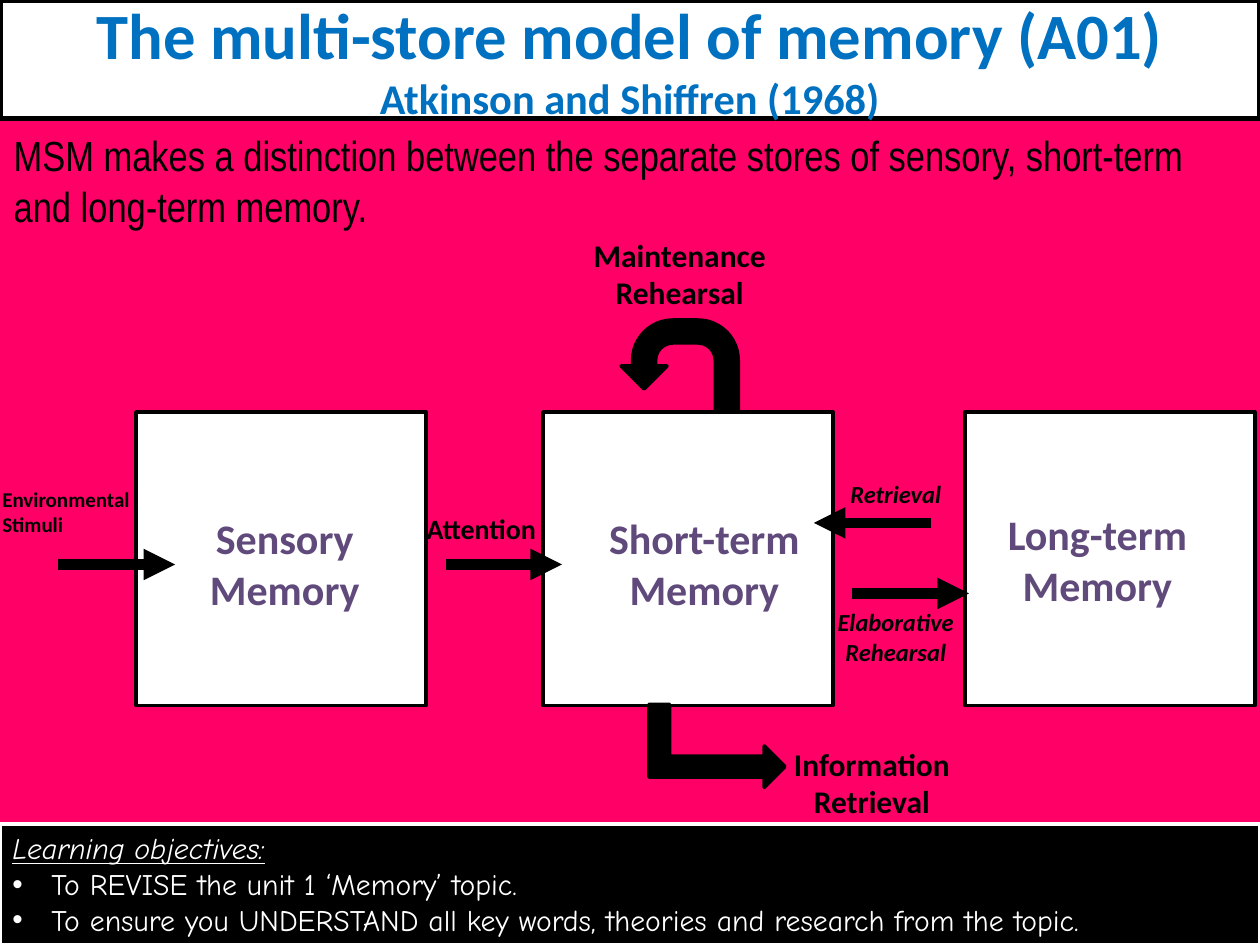
from lxml import etree
from pptx import Presentation
from pptx.dml.color import RGBColor
from pptx.enum.shapes import MSO_CONNECTOR, MSO_SHAPE
from pptx.enum.text import MSO_ANCHOR, MSO_AUTO_SIZE, PP_ALIGN
from pptx.oxml.ns import qn
from pptx.util import Inches, Pt

RECTANGLE = MSO_SHAPE.RECTANGLE
LEFT, CENTER = PP_ALIGN.LEFT, PP_ALIGN.CENTER
TOP, MIDDLE, BOTTOM = MSO_ANCHOR.TOP, MSO_ANCHOR.MIDDLE, MSO_ANCHOR.BOTTOM
COLORS = {"pink": "FF0066", "black": "000000", "white": "FFFFFF",
          "blue": "0070C0", "purple": "604A7B"}


def paint(shape, fill, line, width):
    shape.fill.solid()
    shape.fill.fore_color.rgb = RGBColor.from_string(COLORS[fill])
    shape.line.color.rgb = RGBColor.from_string(COLORS[line])
    shape.line.width = Pt(width)
    shape.shadow.inherit = False


def write(shape, text, size, color="black", font="Calibri", bold=True,
          italic=False, align=CENTER, anchor=TOP):
    frame = shape.text_frame
    frame.text = text
    frame.word_wrap = True
    frame.auto_size = MSO_AUTO_SIZE.NONE
    frame.vertical_anchor = anchor
    for paragraph in frame.paragraphs:
        paragraph.alignment = align
        for span in paragraph.runs:
            span.font.name = font
            span.font.size = Pt(size)
            span.font.bold = bold
            span.font.italic = italic
            span.font.color.rgb = RGBColor.from_string(COLORS[color])


deck = Presentation()
deck.slide_width, deck.slide_height = Inches(10), Inches(7.5)
page = deck.slides.add_slide(deck.slide_layouts[5])
page.background.fill.solid()
page.background.fill.fore_color.rgb = RGBColor.from_string(COLORS["pink"])

# Title banner
title = page.shapes.title
title.left, title.top = Inches(0), Inches(0)
title.width, title.height = Inches(10), Inches(0.94)
paint(title, "white", "black", 3)
write(title, "The multi-store model of memory (A01)\nAtkinson and Shiffren (1968)",
      36.9, "blue", anchor=MIDDLE)
title.text_frame.paragraphs[1].runs[0].font.size = Pt(24.2)

# Memory stores
for left in (1.08, 4.31, 7.66):
    store = page.shapes.add_shape(RECTANGLE, Inches(left), Inches(3.27),
                                  Inches(2.3), Inches(2.33))
    paint(store, "white", "black", 2)

# Straight arrows between the stores: start, end, height
for start, end, y in ((0.46, 1.39, 4.48), (3.54, 4.46, 4.48),
                      (6.76, 7.69, 4.71), (7.39, 6.46, 4.15)):
    arrow = page.shapes.add_connector(MSO_CONNECTOR.STRAIGHT, Inches(start), Inches(y),
                                      Inches(end), Inches(y))
    arrow.line.color.rgb = RGBColor.from_string(COLORS["black"])
    arrow.line.width = Pt(6)
    etree.SubElement(arrow.line._get_or_add_ln(), qn("a:tailEnd"), type="triangle")
    etree.SubElement(arrow._element.spPr, qn("a:effectLst"))

# Bent arrows
rehearsal_loop = page.shapes.add_shape(MSO_SHAPE.U_TURN_ARROW, Inches(4.93), Inches(2.54),
                                       Inches(0.93), Inches(0.73))
rehearsal_loop._element.spPr.xfrm.set("flipH", "1")
retrieval_exit = page.shapes.add_shape(MSO_SHAPE.BENT_UP_ARROW, Inches(5.36), Inches(5.38),
                                       Inches(0.66), Inches(1.08))
retrieval_exit.rotation = 90
for arrow in (rehearsal_loop, retrieval_exit):
    paint(arrow, "black", "black", 2)

# Labels: text, left, top, width, height, size, further formatting
labels = [
    ("Environmental Stimuli", -0.08, 3.81, 1.56, 0.5, 12, {"align": LEFT}),
    ("Retrieval", 6.33, 3.75, 1.56, 0.34, 14, {"italic": True}),
    ("Elaborative Rehearsal", 6.33, 4.77, 1.56, 0.57, 14, {"italic": True}),
    ("Maintenance\nRehearsal", 4.58, 1.82, 1.63, 0.71, 18, {}),
    ("Information Retrieval", 6.14, 5.86, 1.56, 0.71, 18, {}),
    ("Attention", 3.04, 4.01, 1.56, 0.37, 16, {}),
    ("Sensory Memory", 1.48, 4.02, 1.56, 0.91, 24, {"color": "purple"}),
    ("Short-term Memory", 4.69, 4.02, 1.8, 0.91, 24, {"color": "purple"}),
    ("Long-term Memory", 7.81, 3.99, 1.8, 0.91, 24, {"color": "purple"}),
    ("MSM makes a distinction between the separate stores of sensory, short-term "
     "and long-term memory.", 0.01, 0.94, 9.99, 0.94, 24,
     {"font": "Arial Narrow", "bold": False, "align": LEFT, "anchor": BOTTOM}),
]
for text, left, top, width, height, size, style in labels:
    box = page.shapes.add_textbox(Inches(left), Inches(top), Inches(width), Inches(height))
    write(box, text, size, **style)

# Learning objectives
objectives = page.shapes.add_shape(RECTANGLE, Inches(0), Inches(6.54),
                                   Inches(10), Inches(0.96))
paint(objectives, "black", "white", 2)
write(objectives, "Learning objectives:\n"
      "To REVISE the unit 1 ‘Memory’ topic.\n"
      "To ensure you UNDERSTAND all key words, theories and research from the topic.",
      17, "white", "Comic Neue", bold=False, align=LEFT)
heading, *goals = objectives.text_frame.paragraphs
heading.runs[0].font.italic = True
heading.runs[0].font.underline = True
for goal in goals:
    properties = goal._p.get_or_add_pPr()
    properties.set("marL", str(Inches(0.31)))
    properties.set("indent", str(Inches(-0.31)))
    etree.SubElement(properties, qn("a:buFont"), typeface="Arial")
    etree.SubElement(properties, qn("a:buChar"), char="•")

deck.save("out.pptx")
